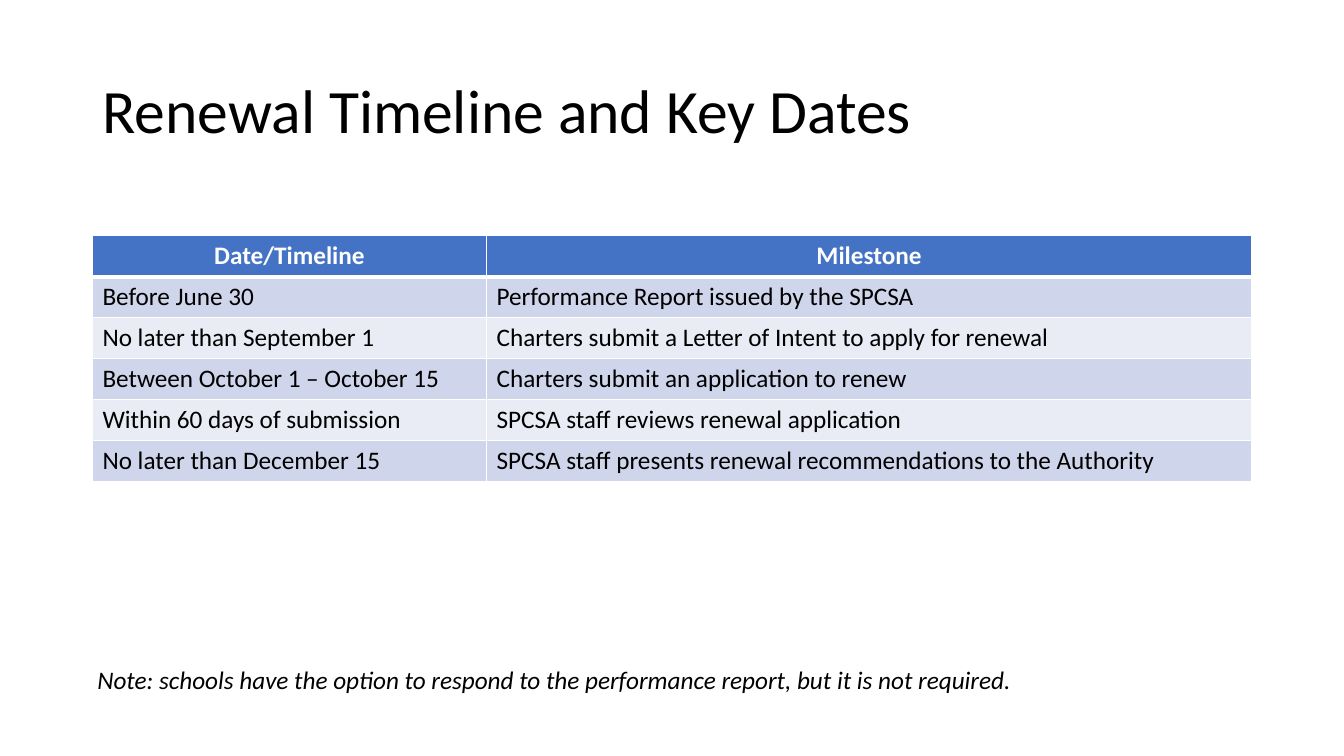
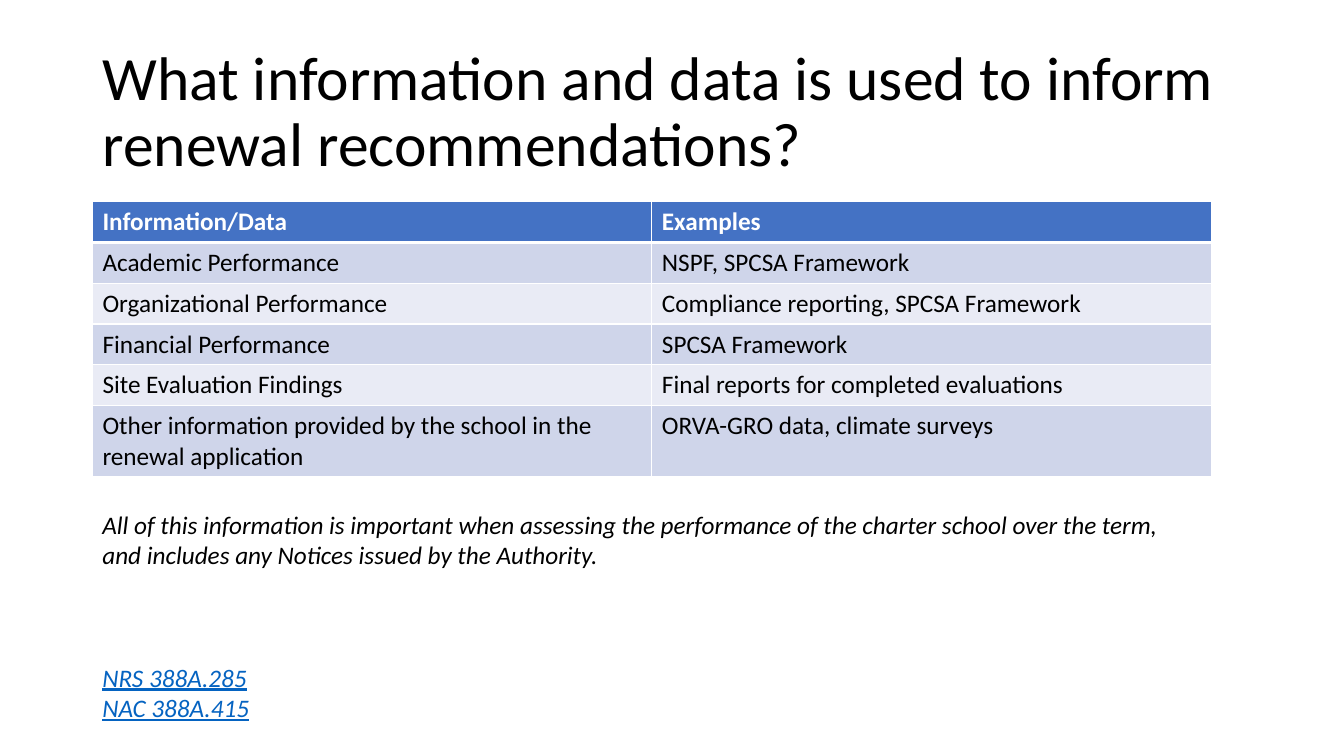
from dataclasses import dataclass

from lxml import etree
from pptx import Presentation
from pptx.dml.color import RGBColor
from pptx.enum.text import MSO_ANCHOR, MSO_AUTO_SIZE, PP_ALIGN
from pptx.oxml.ns import qn
from pptx.slide import Slide
from pptx.table import _Cell
from pptx.text.text import _Paragraph
from pptx.util import Emu, Inches, Pt

LEFT, CENTER = PP_ALIGN.LEFT, PP_ALIGN.CENTER
TOP, MIDDLE = MSO_ANCHOR.TOP, MSO_ANCHOR.MIDDLE
FIT_SHAPE, NO_FIT = MSO_AUTO_SIZE.SHAPE_TO_FIT_TEXT, MSO_AUTO_SIZE.NONE
SLIDE_WIDTH, SLIDE_HEIGHT = Inches(13.33), Inches(7.5)
BLANK_LAYOUT = 6


@dataclass(frozen=True)
class Theme:
    font: str = "Calibri"
    title_size: int = 44
    body_size: int = 18
    title_line_spacing: float = 0.9
    text: str = "000000"
    link: str = "0563C1"
    header_text: str = "FFFFFF"
    header_fill: str = "4472C4"
    band_fills: tuple[str, str] = ("CFD5EA", "E9EBF5")
    border: str = "FFFFFF"
    thin_border: int = 1
    header_border: int = 3


@dataclass(frozen=True)
class Area:
    """A rectangle in percent of the slide's width and height."""
    left: float
    top: float
    width: float
    height: float

    def lengths(self) -> tuple[Emu, Emu, Emu, Emu]:
        return (Emu(round(SLIDE_WIDTH * self.left / 100)),
                Emu(round(SLIDE_HEIGHT * self.top / 100)),
                Emu(round(SLIDE_WIDTH * self.width / 100)),
                Emu(round(SLIDE_HEIGHT * self.height / 100)))


@dataclass(frozen=True)
class Line:
    text: str
    link_style: bool = False
    space_before: int = 0


@dataclass(frozen=True)
class TableContent:
    area: Area
    column_shares: tuple[float, ...]
    header_alignment: PP_ALIGN
    rows: tuple[tuple[str, ...], ...]


@dataclass(frozen=True)
class SlideContent:
    title: str
    table: TableContent
    note_area: Area
    note: tuple[Line, ...]


THEME = Theme()
MARGIN = 6.88
TITLE_AREA = Area(MARGIN, 5.33, 86.25, 19.33)
TABLE_HEIGHT = 32.4

SLIDES = (
    SlideContent(
        title="Renewal Timeline and Key Dates",
        table=TableContent(
            Area(MARGIN, 31.2, 86.25, TABLE_HEIGHT), (0.34, 0.66), CENTER, (
                ("Date/Timeline", "Milestone"),
                ("Before June 30", "Performance Report issued by the SPCSA"),
                ("No later than September 1",
                 "Charters submit a Letter of Intent to apply for renewal"),
                ("Between October 1 – October 15",
                 "Charters submit an application to renew"),
                ("Within 60 days of submission",
                 "SPCSA staff reviews renewal application"),
                ("No later than December 15",
                 "SPCSA staff presents renewal recommendations to the Authority"),
            )),
        note_area=Area(6.5, 87.2, 92.4, 5.33),
        note=(Line("Note: schools have the option to respond to the performance "
                   "report, but it is not required."),),
    ),
    SlideContent(
        title="What information and data is used to inform renewal recommendations?",
        table=TableContent(
            Area(MARGIN, 26.67, 83.25, TABLE_HEIGHT), (0.5, 0.5), LEFT, (
                ("Information/Data", "Examples"),
                ("Academic Performance", "NSPF, SPCSA Framework"),
                ("Organizational Performance",
                 "Compliance reporting, SPCSA Framework"),
                ("Financial Performance", "SPCSA Framework"),
                ("Site Evaluation Findings",
                 "Final reports for completed evaluations"),
                ("Other information provided by the school in the renewal application",
                 "ORVA-GRO data, climate surveys"),
            )),
        note_area=Area(MARGIN, 66.67, 83.25, 29.6),
        note=(Line("All of this information is important when assessing the "
                   "performance of the charter school over the term, and includes "
                   "any Notices issued by the Authority."),
              Line("NRS 388A.285", link_style=True, space_before=66),
              Line("NAC 388A.415", link_style=True)),
    ),
)


def style_paragraph(paragraph: _Paragraph, size: int, color: str,
                    bold: bool = False, italic: bool = False) -> None:
    font = paragraph.font
    font.name, font.size = THEME.font, Pt(size)
    font.bold, font.italic = bold, italic
    font.color.rgb = RGBColor.from_string(color)


def add_text(slide: Slide, area: Area, lines: tuple[Line, ...], size: int,
             italic: bool = False, anchor: MSO_ANCHOR = TOP,
             auto_size: MSO_AUTO_SIZE = FIT_SHAPE,
             line_spacing: float = 1.0) -> None:
    frame = slide.shapes.add_textbox(*area.lengths()).text_frame
    frame.word_wrap = True
    frame.auto_size = auto_size
    frame.vertical_anchor = anchor
    for index, line in enumerate(lines):
        paragraph = frame.add_paragraph() if index else frame.paragraphs[0]
        paragraph.text = line.text
        paragraph.line_spacing = line_spacing
        paragraph.space_before = Pt(line.space_before)
        color = THEME.link if line.link_style else THEME.text
        style_paragraph(paragraph, size, color, italic=italic)
        paragraph.font.underline = line.link_style


def set_borders(cell: _Cell, top: int, bottom: int) -> None:
    """Draw the four cell borders, placed before the fill as the schema asks."""
    properties = cell._tc.get_or_add_tcPr()
    widths = {"a:lnL": THEME.thin_border, "a:lnR": THEME.thin_border,
              "a:lnT": top, "a:lnB": bottom}
    for position, (tag, width) in enumerate(widths.items()):
        border = etree.Element(qn(tag), w=str(Pt(width)))
        fill = etree.SubElement(border, qn("a:solidFill"))
        etree.SubElement(fill, qn("a:srgbClr"), val=THEME.border)
        properties.insert(position, border)


def add_table(slide: Slide, content: TableContent) -> None:
    area = content.area.lengths()
    table = slide.shapes.add_table(
        len(content.rows), len(content.column_shares), *area).table
    for column, share in zip(table.columns, content.column_shares):
        column.width = Emu(round(area[2] * share))
    for row_index, row in enumerate(content.rows):
        is_header = row_index == 0
        fill = THEME.header_fill if is_header else THEME.band_fills[(row_index - 1) % 2]
        color = THEME.header_text if is_header else THEME.text
        top = THEME.header_border if row_index == 1 else THEME.thin_border
        bottom = THEME.header_border if is_header else THEME.thin_border
        for column_index, text in enumerate(row):
            cell = table.cell(row_index, column_index)
            cell.text = text
            cell.fill.solid()
            cell.fill.fore_color.rgb = RGBColor.from_string(fill)
            set_borders(cell, top, bottom)
            paragraph = cell.text_frame.paragraphs[0]
            paragraph.alignment = content.header_alignment if is_header else LEFT
            style_paragraph(paragraph, THEME.body_size, color, bold=is_header)


def add_slide(presentation: Presentation, content: SlideContent) -> None:
    slide = presentation.slides.add_slide(presentation.slide_layouts[BLANK_LAYOUT])
    add_text(slide, TITLE_AREA, (Line(content.title),), THEME.title_size,
             anchor=MIDDLE, auto_size=NO_FIT,
             line_spacing=THEME.title_line_spacing)
    add_table(slide, content.table)
    add_text(slide, content.note_area, content.note, THEME.body_size, italic=True)


def main() -> None:
    presentation = Presentation()
    presentation.slide_width, presentation.slide_height = SLIDE_WIDTH, SLIDE_HEIGHT
    for content in SLIDES:
        add_slide(presentation, content)
    presentation.save("out.pptx")


if __name__ == "__main__":
    main()
